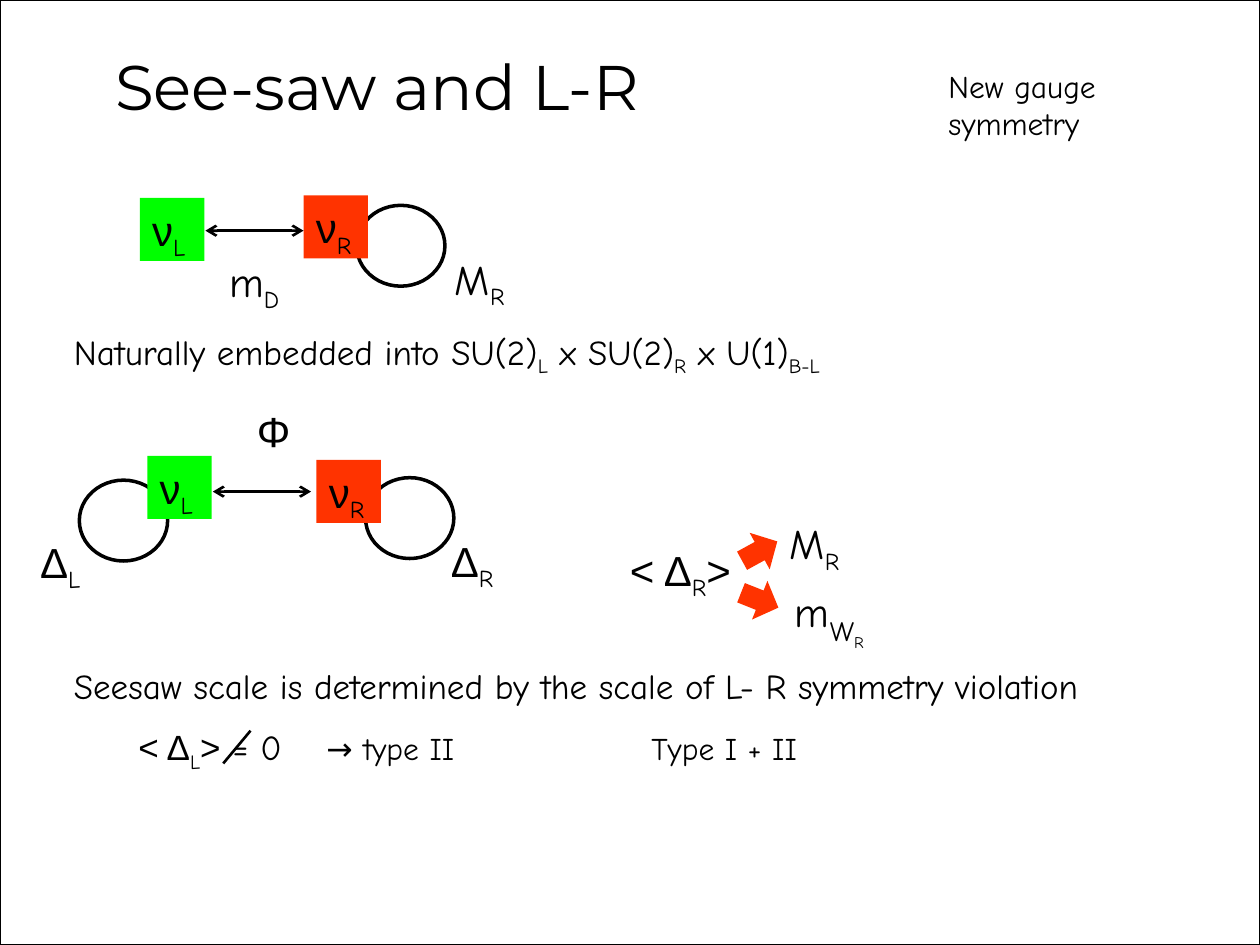
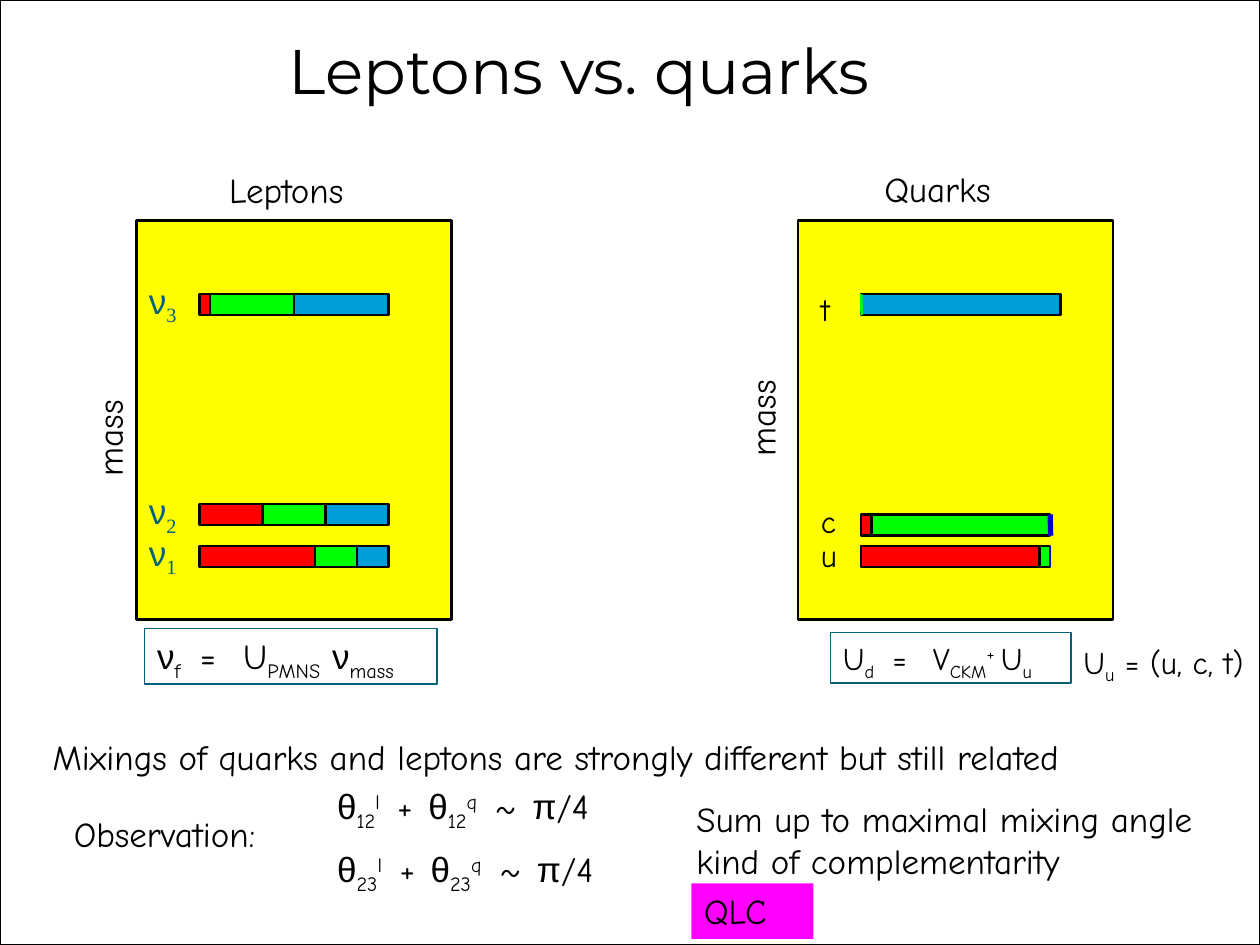
"""Build two slides on the see-saw mechanism and on lepton and quark mixing."""
from dataclasses import dataclass
from typing import Any, NamedTuple, Optional

from lxml import etree
from pptx import Presentation
from pptx import util as u
from pptx.dml import color as dml
from pptx.enum import shapes, text
from pptx.oxml import ns

BODY, SYMBOL, TITLE, SERIF = "Comic Neue", "Arial", "Montserrat", "Times New Roman"
BLACK, WHITE, TEAL = "000000", "FFFFFF", "04617B"
GREEN, ORANGE, YELLOW, MAGENTA = "00FF00", "FF3300", "FFFF00", "FF00FF"
RED, BLUE, NAVY = "FF0000", "009DD9", "0000CC"
FLAVOURS = (RED, GREEN, BLUE)
TICK = 25.4 / 120
BAR_HEIGHT = 2
RECT, OVAL, ARROW = (shapes.MSO_SHAPE.RECTANGLE, shapes.MSO_SHAPE.OVAL,
                     shapes.MSO_SHAPE.RIGHT_ARROW)


class Run(NamedTuple):
    words: str
    font: str = BODY
    base: int = 0
    spacing: int = 0


class Box(NamedTuple):
    left: float
    top: float
    width: float
    height: float


@dataclass
class Label:
    box: Box
    paragraphs: list[list[Run]]
    size: float = 20
    fill: Optional[str] = None
    line: Optional[str] = None
    colour: str = BLACK
    wrap: bool = True
    turn: float = 0


@dataclass
class Figure:
    kind: Any
    box: Box
    fill: Optional[str] = None
    line: Optional[str] = None
    weight: float = 0.75
    turn: float = 0


@dataclass
class Stroke:
    start: tuple[float, float]
    end: tuple[float, float]
    colour: str = BLACK
    weight: float = 1.5
    arrows: bool = False


class Level(NamedTuple):
    name: list[Run]
    top: int
    name_top: float
    shares: tuple[int, ...]


class Panel(NamedTuple):
    left: int
    bar_left: int
    name_left: int
    name_size: float
    name_colour: str
    framed: bool
    levels: tuple[Level, ...]


def rgb(value: str) -> dml.RGBColor:
    return dml.RGBColor.from_string(value)


def apply(target: Any, values: dict[str, Any]) -> None:
    for name, value in values.items():
        setattr(target, name, value)


def cm(box: Box) -> list[int]:
    return [u.Cm(length) for length in box]


def ticks(left: float, top: float, width: float, height: float) -> Box:
    return Box(left * TICK, top * TICK, width * TICK, height * TICK)


def sym(words: str) -> Run:
    return Run(words, SYMBOL)


def sub(words: str, font: str = BODY) -> Run:
    return Run(words, font, -25000)


def sup(words: str) -> Run:
    return Run(words, BODY, 30000)


def write(frame: Any, paragraphs: list[list[Run]], size: float, colour: str) -> None:
    for index, runs in enumerate(paragraphs):
        paragraph = frame.add_paragraph() if index else frame.paragraphs[0]
        paragraph.alignment = text.PP_ALIGN.LEFT
        for words, font, base, spacing in runs:
            run = paragraph.add_run()
            run.text = words
            apply(run.font, {"name": font, "size": u.Pt(size)})
            run.font.color.rgb = rgb(colour)
            properties = run.font._element
            for key, value in {"baseline": base, "spc": spacing}.items():
                if value:
                    properties.set(key, str(value))


def draw_figure(slide: Any, figure: Figure) -> Any:
    shape = slide.shapes.add_shape(figure.kind, *cm(figure.box))
    shape.shadow.inherit = False
    shape.rotation = figure.turn
    if figure.fill:
        shape.fill.solid()
        shape.fill.fore_color.rgb = rgb(figure.fill)
    else:
        shape.fill.background()
    if figure.line:
        shape.line.color.rgb = rgb(figure.line)
        shape.line.width = u.Pt(figure.weight)
    else:
        shape.line.fill.background()
    return shape


def draw_label(slide: Any, label: Label) -> None:
    if label.fill:
        shape = draw_figure(slide, Figure(RECT, label.box, label.fill, label.line))
    else:
        shape = slide.shapes.add_textbox(*cm(label.box))
    shape.rotation = label.turn
    apply(shape.text_frame, {"word_wrap": label.wrap,
                             "vertical_anchor": text.MSO_ANCHOR.TOP})
    write(shape.text_frame, label.paragraphs, label.size, label.colour)


def draw_stroke(slide: Any, stroke: Stroke) -> None:
    ends = [u.Cm(value) for value in (*stroke.start, *stroke.end)]
    connector = slide.shapes.add_connector(shapes.MSO_CONNECTOR.STRAIGHT, *ends)
    connector.line.color.rgb = rgb(stroke.colour)
    connector.line.width = u.Pt(stroke.weight)
    if stroke.arrows:
        outline = connector.line._get_or_add_ln()
        for end in ("a:headEnd", "a:tailEnd"):
            etree.SubElement(outline, ns.qn(end), type="arrow")
    etree.SubElement(connector.element.spPr, ns.qn("a:effectLst"))


DRAWERS = {Label: draw_label, Figure: draw_figure, Stroke: draw_stroke}


def draw(slide: Any, *parts: Any) -> None:
    for part in parts:
        DRAWERS[type(part)](slide, part)


def start_slide(deck: Any, heading: str, box: Box) -> Any:
    slide = deck.slides.add_slide(deck.slide_layouts[5])
    frame = draw_figure(slide, Figure(RECT, Box(0, 0, 25.4, 19.05), WHITE, BLACK))
    slide.shapes.element.insert(2, frame.element)
    title = slide.shapes.title
    apply(title, dict(zip(("left", "top", "width", "height"), cm(box))))
    apply(title.text_frame, {"word_wrap": False, "auto_size": text.MSO_AUTO_SIZE.NONE,
                             "vertical_anchor": text.MSO_ANCHOR.TOP})
    write(title.text_frame, [[Run(heading, TITLE)]], 36, BLACK)
    title.text_frame.paragraphs[0].alignment = text.PP_ALIGN.CENTER
    return slide


def term(left: float, top: float, width: float, *runs: Run, size: float = 24) -> Label:
    return Label(Box(left, top, width, 1.27), [list(runs)], size)


def neutrino(left: float, top: float, hand: str) -> Label:
    fill = GREEN if hand == "L" else ORANGE
    return Label(Box(left, top, 1.3, 1.27), [[sym("ν"), sub(hand)]], 24, fill)


def loop(left: float, top: float) -> Figure:
    return Figure(OVAL, Box(left, top, 1.78, 1.63), line=BLACK, weight=2)


def coupling(left: float, top: float) -> Stroke:
    return Stroke((left, top), (left + 1.98, top), arrows=True)


def leads_to(top: float, turn: float) -> Figure:
    return Figure(ARROW, Box(14.91, top, 0.81, 0.84), ORANGE, turn=turn)


def build_seesaw(deck: Any) -> None:
    slide = start_slide(deck, "See-saw and L-R", Box(1.6, 0.84, 12, 1.8))
    majorana_mass = (Run("M"), sub("R"))
    draw(
        slide,
        neutrino(2.82, 3.99, "L"), loop(7.19, 4.14), neutrino(6.12, 3.94, "R"),
        coupling(4.14, 4.65),
        term(8.92, 4.98, 1.85, *majorana_mass),
        term(4.37, 5.03, 1.85, Run("m"), sub("D")),
        term(1.24, 6.53, 17.63, Run("Naturally embedded into SU(2)"), sub("L"),
             Run(" x SU(2)"), sub("R"), Run(" x U(1)"), sub("B-L"), size=20),
        term(4.93, 8.05, 1.3, sym("Φ")),
        term(8.84, 10.67, 1.78, sym("Δ"), sub("R")),
        term(0.56, 10.69, 1.7, sym("Δ"), sub("L")),
        coupling(4.29, 9.91), loop(7.37, 9.63), loop(1.6, 9.68),
        neutrino(6.38, 9.27, "R"), neutrino(2.97, 9.19, "L"),
        term(12.45, 10.85, 2.79, sym("< Δ"), sub("R"), sym(">")),
        term(15.67, 10.31, 1.85, *majorana_mass),
        term(15.77, 11.68, 1.07, Run("m")),
        term(16.48, 12.24, 1.6, Run("W"), sub("R"), size=16),
        leads_to(10.69, 331.2), leads_to(11.68, 21.7),
        term(1.24, 13.28, 22.78, Run(
            "Seesaw scale is determined by the scale of L- R symmetry violation"), size=20),
        term(2.54, 14.5, 3.86, sym("< Δ"), sub("L"), sym(">"), Run(" = 0"), size=20),
        Stroke((5.05, 14.73), (4.5, 15.39)),
        term(6.12, 14.58, 3.91, Run(" → type II"), size=18),
        term(12.88, 14.58, 3.94, Run("Type I + II"), size=18),
        term(18.87, 1.22, 3.96, Run("New gauge symmetry"), size=18),
    )


def draw_panel(slide: Any, panel: Panel) -> None:
    draw(slide, Figure(RECT, ticks(panel.left, 21, 30, 38), YELLOW, BLACK, 1.5))
    for level in panel.levels:
        left = panel.bar_left
        for share, flavour in zip(level.shares, FLAVOURS):
            if share:
                draw(slide, Figure(RECT, ticks(left, level.top, share, BAR_HEIGHT),
                                   flavour, BLACK, 1.5))
            left += share
        if panel.framed:
            draw(slide, Figure(RECT, ticks(panel.bar_left, level.top, sum(level.shares),
                                           BAR_HEIGHT), line=BLACK))
        draw(slide, Label(ticks(panel.name_left, level.name_top, 5.2, 5.1), [level.name],
                          panel.name_size, colour=panel.name_colour, wrap=False))


def mass_state(number: str, top: int, *shares: int) -> Level:
    return Level([sym("ν"), sub(number, SERIF)], top, top - 2, shares)


def angle_sum(top: float, indices: str) -> Label:
    runs = [sym(" θ"), sub(indices), sup("l"), Run(" +", spacing=330), sym(" θ"),
            sub(indices), sup("q"), Run(" ~", spacing=350), sym(" π"), Run("/4")]
    return Label(Box(6.35, top, 6.48, 1.12), [runs], fill=WHITE)


def build_mixing(deck: Any) -> None:
    slide = start_slide(deck, "Leptons vs. quarks", Box(3.23, 0.51, 16.89, 2.57))
    leptons = Panel(13, 19, 13, 20, TEAL, True, (
        mass_state("3", 28, 1, 8, 9),
        mass_state("2", 48, 6, 6, 6),
        mass_state("1", 52, 11, 4, 3)))
    quarks = Panel(76, 82, 77, 18, BLACK, False, (
        Level([Run("t")], 28, 27, (0, 0, 19)),
        Level([Run("c")], 49, 47.2, (1, 17)),
        Level([Run("u")], 52, 50.5, (17, 1))))
    for panel in (leptons, quarks):
        draw_panel(slide, panel)
    for name, left, top in (("Leptons", 4.37, 3.28), ("Quarks", 17.58, 3.25)):
        draw(slide, Label(Box(left, top, 3.1, 1.12), [[Run(name)]], wrap=False))
    for left, top in ((1.14, 8.23), (14.3, 7.82)):
        draw(slide, Label(Box(left, top, 2.13, 1.12), [[Run("mass")]],
                          wrap=False, turn=270))
    equals = Run(" = ", spacing=440)
    draw(
        slide,
        Stroke((21.17, 11), (21.17, 11.43), NAVY, 1),
        Stroke((21.17, 10.37), (21.18, 10.8), NAVY, 3),
        Stroke((17.36, 5.93), (17.37, 6.35), GREEN),
        Label(Box(2.92, 12.67, 5.89, 1.12),
              [[sym("ν"), sub("f"), equals, Run("U"), sub("PMNS"), Run(" "), sym("ν"),
                sub("mass")]], fill=WHITE, line=TEAL, wrap=False),
        Label(Box(16.74, 12.75, 4.85, 1.02),
              [[Run("U"), sub("d"), equals, Run("V"), sub("CKM"), sup("+ "), Run("U"),
                sub("u")]], 18, WHITE, TEAL, wrap=False),
        Label(Box(21.59, 12.83, 4.09, 1.02),
              [[Run("U"), sub("u"), Run(" = (u, c, t)")]], 18, wrap=False),
        Label(Box(0.81, 14.71, 23.67, 1.12), [[Run(
            "Mixings of quarks and leptons are strongly different but still related")]]),
        Label(Box(1.24, 16.26, 5.11, 1.12), [[Run("Observation:")]]),
        angle_sum(15.7, "12"), angle_sum(16.97, "23"),
        Label(Box(13.79, 15.95, 11.3, 1.96),
              [[Run("Sum up to maximal mixing angle")], [Run("kind of complementarity")]]),
        Label(Box(13.94, 17.81, 2.46, 1.12), [[Run("QLC")]], fill=MAGENTA),
    )


def main() -> None:
    deck = Presentation()
    apply(deck, {"slide_width": u.Cm(25.4), "slide_height": u.Cm(19.05)})
    build_seesaw(deck)
    build_mixing(deck)
    deck.save("out.pptx")


if __name__ == "__main__":
    main()
